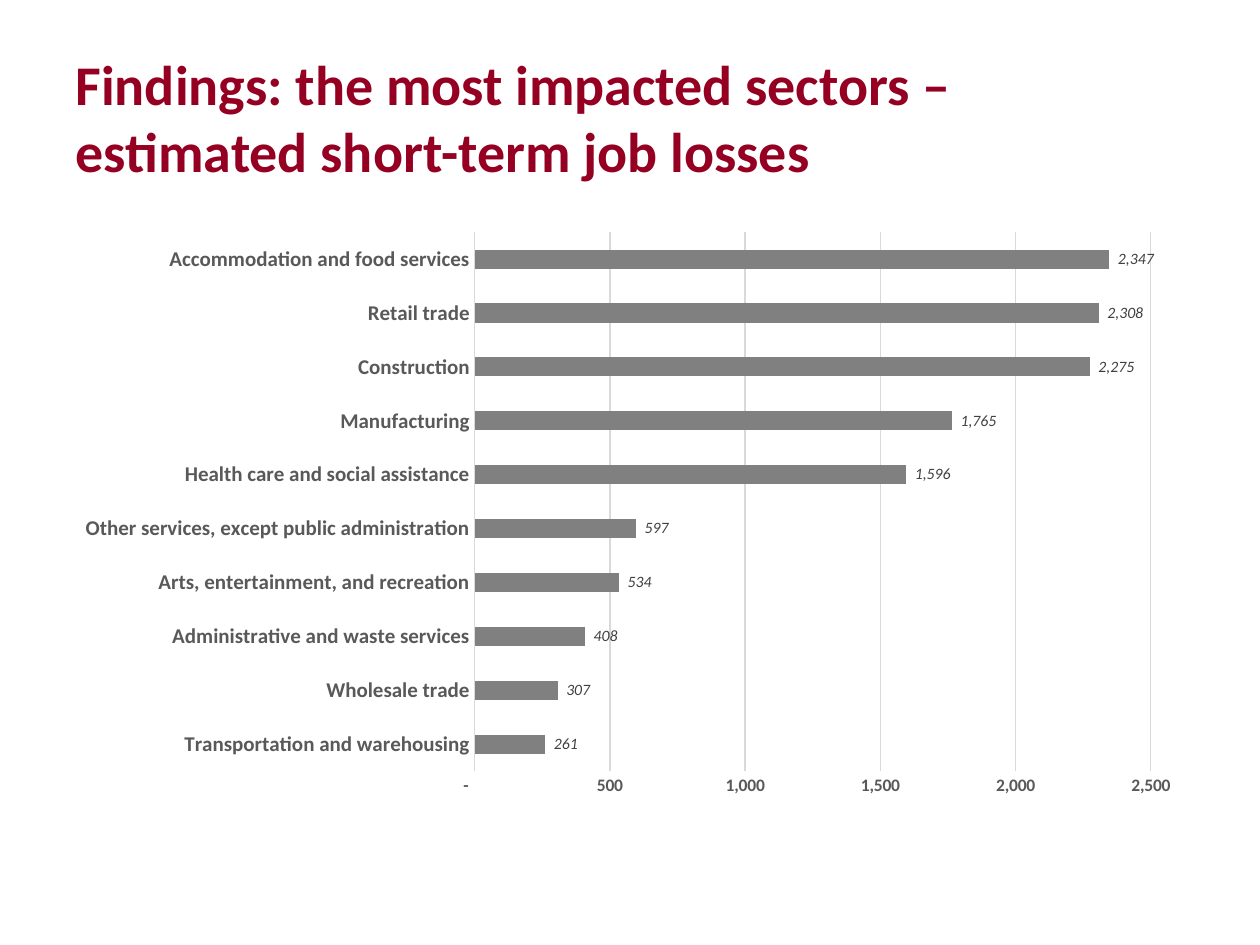
from pptx import Presentation
from pptx.chart.data import CategoryChartData
from pptx.dml.color import RGBColor
from pptx.enum.chart import XL_CHART_TYPE, XL_LABEL_POSITION, XL_TICK_MARK
from pptx.enum.text import MSO_ANCHOR, MSO_AUTO_SIZE, PP_ALIGN
from pptx.util import Pt

COLORS = {
    "title": "950022",
    "bar": "808080",
    "axis": "595959",
    "value": "404040",
    "grid": "D9D9D9",
    "text": "000000",
    "background": "FFFFFF",
}
COUNT_FORMAT = '_(* #,##0_);_(* \\(#,##0\\);_(* "-"??_);_(@_)'
JOB_LOSSES = {
    "Transportation and warehousing": 261,
    "Wholesale trade": 307,
    "Administrative and waste services": 408,
    "Arts, entertainment, and recreation": 534,
    "Other services, except public administration": 597,
    "Health care and social assistance": 1596,
    "Manufacturing": 1765,
    "Construction": 2275,
    "Retail trade": 2308,
    "Accommodation and food services": 2347,
}


class FindingsSlide:
    """Holds the style and the slide, and draws its title and bar chart."""

    def __init__(self, presentation, font_name="Calibri"):
        self.font_name = font_name
        self.slide = presentation.slides.add_slide(presentation.slide_layouts[5])
        self.paint(self.slide.background.fill, "background")

    def paint(self, fill, color):
        fill.solid()
        fill.fore_color.rgb = RGBColor.from_string(COLORS[color])

    def style_font(self, font, size, color, bold=False, italic=False):
        font.name = self.font_name
        font.size = Pt(size)
        font.bold = bold
        font.italic = italic
        font.color.rgb = RGBColor.from_string(COLORS[color])

    def style_line(self, line):
        self.paint(line.fill, "grid")
        line.width = Pt(0.75)

    def style_axis(self, axis, size):
        axis.major_tick_mark = axis.minor_tick_mark = XL_TICK_MARK.NONE
        self.style_font(axis.tick_labels.font, size, "axis", bold=True)

    def title(self, text, left, top, width, height):
        heading = self.slide.shapes.title
        heading.left, heading.top = Pt(left), Pt(top)
        heading.width, heading.height = Pt(width), Pt(height)
        frame = heading.text_frame
        frame.text = text
        frame.word_wrap = True
        frame.auto_size = MSO_AUTO_SIZE.NONE
        frame.vertical_anchor = MSO_ANCHOR.MIDDLE
        frame.paragraphs[0].alignment = PP_ALIGN.LEFT
        self.style_font(frame.paragraphs[0].font, 32, "title", bold=True)

    def bar_chart(self, counts, left, top, width, height):
        data = CategoryChartData(number_format=COUNT_FORMAT)
        data.categories = list(counts)
        data.add_series("Series 1", list(counts.values()))
        chart = self.slide.shapes.add_chart(
            XL_CHART_TYPE.BAR_CLUSTERED, Pt(left), Pt(top), Pt(width), Pt(height), data
        ).chart
        chart.has_legend = False
        chart.has_title = False
        self.style_font(chart.font, 10, "text")

        sectors = chart.category_axis
        self.style_axis(sectors, 12)
        self.style_line(sectors.format.line)

        losses = chart.value_axis
        self.style_axis(losses, 10)
        losses.minimum_scale, losses.maximum_scale, losses.major_unit = 0, 2500, 500
        losses.tick_labels.number_format = COUNT_FORMAT
        losses.tick_labels.number_format_is_linked = False
        losses.format.line.fill.background()
        losses.has_major_gridlines = True
        self.style_line(losses.major_gridlines.format.line)

        bars = chart.plots[0]
        bars.gap_width = 182
        bars.vary_by_categories = False
        self.paint(bars.series[0].format.fill, "bar")
        labels = bars.series[0].data_labels
        labels.show_value = True
        labels.position = XL_LABEL_POSITION.OUTSIDE_END
        labels.number_format = COUNT_FORMAT
        labels.number_format_is_linked = False
        self.style_font(labels.font, 9, "value", italic=True)


def main():
    presentation = Presentation()
    presentation.slide_width, presentation.slide_height = Pt(720), Pt(540)
    findings = FindingsSlide(presentation)
    findings.title(
        "Findings: the most impacted sectors – estimated short-term job losses",
        36, 21.6, 648, 90,
    )
    findings.bar_chart(JOB_LOSSES, 36, 126, 648, 335.5)
    presentation.save("out.pptx")


if __name__ == "__main__":
    main()
